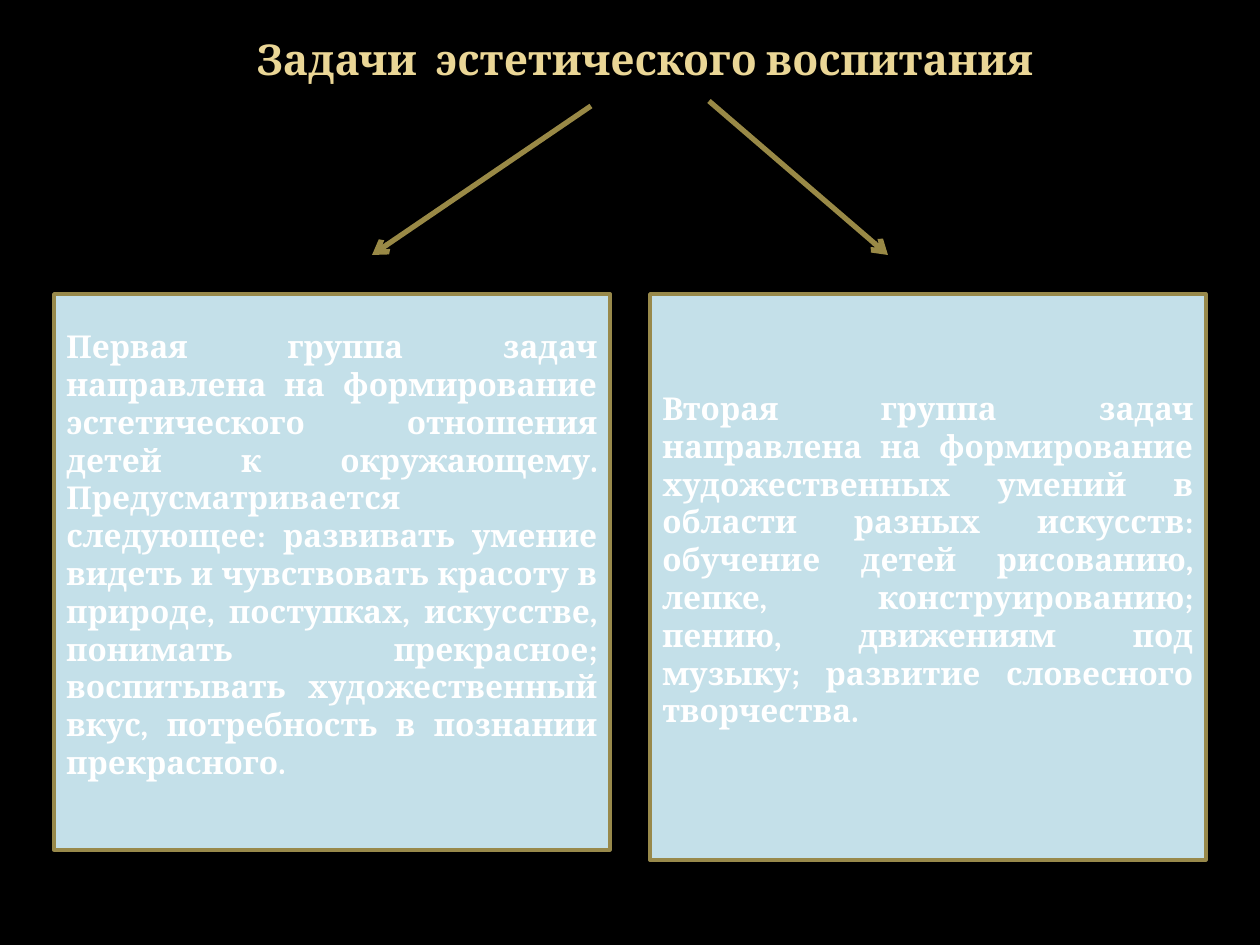
from lxml.etree import SubElement
from pptx import Presentation
from pptx.dml.color import RGBColor
from pptx.enum.shapes import MSO_CONNECTOR, MSO_SHAPE
from pptx.enum.text import MSO_ANCHOR, PP_ALIGN
from pptx.oxml.ns import qn
from pptx.util import Pt

FONT = "Cambria"
TITLE = "Задачи  эстетического воспитания"
FIRST_GROUP = (
    "Первая группа задач направлена на формирование эстетического отношения "
    "детей к окружающему. Предусматривается следующее: развивать умение видеть "
    "и чувствовать красоту в природе, поступках, искусстве, понимать прекрасное; "
    "воспитывать художественный вкус, потребность в познании прекрасного."
)
SECOND_GROUP = (
    "Вторая группа задач направлена на формирование художественных умений в "
    "области разных искусств: обучение детей рисованию, лепке, конструированию; "
    "пению, движениям под музыку; развитие словесного творчества."
)


def px(length):
    """Turn px into EMU at 126 px to the inch."""
    return round(length * 914400 / 126)


def color(value):
    """Return the colour for a hex string."""
    return RGBColor.from_string(value)


def write_text(shape, text, size, text_color, alignment, bottom_margin):
    """Write one bold paragraph, centred vertically above the bottom margin."""
    frame = shape.text_frame
    frame.word_wrap = True
    frame.vertical_anchor = MSO_ANCHOR.MIDDLE
    frame.margin_bottom = px(bottom_margin)
    paragraph = frame.paragraphs[0]
    paragraph.alignment = alignment
    run = paragraph.add_run()
    run.text = text
    run.font.name = FONT
    run.font.size = Pt(size)
    run.font.bold = True
    run.font.color.rgb = color(text_color)


def add_title(slide, left, top, width, height):
    """Add the slide heading."""
    shape = slide.shapes.add_textbox(px(left), px(top), px(width), px(height))
    shape.text_frame.margin_top = 0
    write_text(shape, TITLE, 24.3, "EAD696", PP_ALIGN.CENTER, 27)


def add_task_box(slide, left, height, text):
    """Add a box that describes one group of tasks."""
    shape = slide.shapes.add_shape(
        MSO_SHAPE.RECTANGLE, px(left), px(294), px(556), px(height)
    )
    shape.shadow.inherit = False
    shape.fill.solid()
    shape.fill.fore_color.rgb = color("C4E0E9")
    shape.line.color.rgb = color("98894B")
    shape.line.width = Pt(2)
    write_text(shape, text, 18, "FFFFFF", PP_ALIGN.JUSTIFY, 42)


def add_arrow(slide, start, end):
    """Add a straight arrow from start to end."""
    connector = slide.shapes.add_connector(
        MSO_CONNECTOR.STRAIGHT, *map(px, start + end)
    )
    connector.line.color.rgb = color("998946")
    connector.line.width = Pt(3)
    SubElement(connector.line._get_or_add_ln(), qn("a:tailEnd"), type="arrow")
    SubElement(connector._element.spPr, qn("a:effectLst"))


def main():
    """Build and save the slide."""
    presentation = Presentation()
    presentation.slide_width = px(1260)
    presentation.slide_height = px(945)
    slide = presentation.slides.add_slide(presentation.slide_layouts[6])
    slide.background.fill.solid()
    slide.background.fill.fore_color.rgb = color("000000")
    add_title(slide, 74, 37, 1142, 69)
    add_task_box(slide, 54, 556, FIRST_GROUP)
    add_task_box(slide, 650, 566, SECOND_GROUP)
    add_arrow(slide, (591, 106), (372, 255))
    add_arrow(slide, (709, 101), (888, 255))
    presentation.save("out.pptx")


if __name__ == "__main__":
    main()
